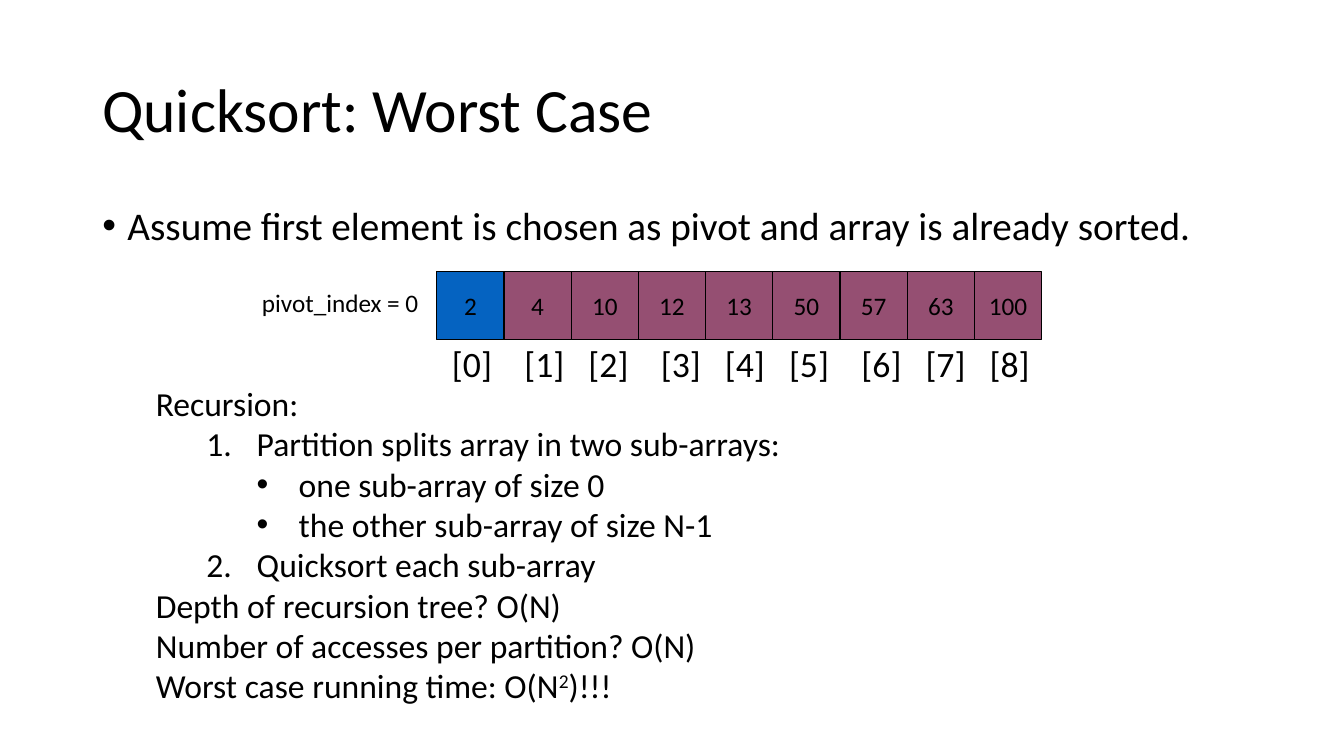
from itertools import accumulate

from lxml import etree
from pptx import Presentation
from pptx import util as u
from pptx.dml.color import RGBColor
from pptx.enum import shapes, text
from pptx.oxml.ns import qn

PX = 9525  # EMU in one px, 96 px to the inch
THEME = {
    "font": "Calibri",
    "ink": RGBColor.from_string("000000"),
    "pivot": RGBColor.from_string("0563C1"),
    "cell": RGBColor.from_string("954F72"),
    "title": 44, "body": 28, "index": 25.5, "steps": 24, "small": 18,
}


def fill_text(sp, lines, size, anchor=text.MSO_ANCHOR.TOP, wrap=True):
    """Put lines into a shape in the theme's font and ink."""
    tf = sp.text_frame
    tf.text = "\n".join(lines)
    tf.word_wrap = wrap
    tf.vertical_anchor = anchor
    for p in tf.paragraphs:
        for r in p.runs:
            r.font.name = THEME["font"]
            r.font.size = u.Pt(THEME[size])
            r.font.color.rgb = THEME["ink"]
    return tf


def indent(p, left, hang, bullet=None, **attrs):
    """Set a hanging indent in px and an optional bullet element."""
    pPr = p._p.get_or_add_pPr()
    pPr.set("marL", str(left * PX))
    pPr.set("indent", str(-hang * PX))
    if bullet == "buChar":
        etree.SubElement(pPr, qn("a:buFont"), typeface="Arial")
    if bullet:
        etree.SubElement(pPr, qn("a:" + bullet), **attrs)


prs = Presentation()
prs.slide_width, prs.slide_height = 1280 * PX, 720 * PX
s = prs.slides.add_slide(prs.slide_layouts[6])

# Title
sp = s.shapes.add_textbox(88 * PX, 38 * PX, 1104 * PX, 139 * PX)
tf = fill_text(sp, ["Quicksort: Worst Case"], "title", text.MSO_ANCHOR.MIDDLE)
tf.paragraphs[0].line_spacing = 0.9

# Assumption
sp = s.shapes.add_textbox(88 * PX, 192 * PX, 1104 * PX, 56 * PX)
tf = fill_text(sp, ["Assume first element is chosen as pivot and array is already sorted."], "body")
indent(tf.paragraphs[0], 24, 24, "buChar", char="•")
tf.paragraphs[0].line_spacing = 0.9

# Array cells, the first one being the pivot
CELL, ARRAY_LEFT, ARRAY_TOP = 64, 416, 259
values = [2, 4, 10, 12, 13, 50, 57, 63, 100]
for i, value in enumerate(values):
    sp = s.shapes.add_shape(shapes.MSO_SHAPE.RECTANGLE, (ARRAY_LEFT + i * CELL) * PX,
                            ARRAY_TOP * PX, CELL * PX, CELL * PX)
    sp.shadow.inherit = False
    sp.fill.solid()
    sp.fill.fore_color.rgb = THEME["pivot" if i == 0 else "cell"]
    sp.line.color.rgb = THEME["ink"]
    sp.line.width = u.Pt(0.75)
    tf = fill_text(sp, [str(value)], "small", text.MSO_ANCHOR.MIDDLE, wrap=False)
    tf.paragraphs[0].alignment = text.PP_ALIGN.CENTER

# Pivot label
sp = s.shapes.add_textbox(240 * PX, 269 * PX, 172 * PX, 38 * PX)
fill_text(sp, ["pivot_index = 0"], "small", wrap=False)

# Recursion steps: text, level
steps = [
    ("Recursion:", 1),
    ("Partition splits array in two sub-arrays:", 2),
    ("one sub-array of size 0", 3),
    ("the other sub-array of size N-1", 3),
    ("Quicksort each sub-array", 2),
    ("Depth of recursion tree? O(N)", 1),
    ("Number of accesses per partition? O(N)", 1),
    ("Worst case running time: O(N", 1),
]
sp = s.shapes.add_textbox(91 * PX, 360 * PX, 949 * PX, 317 * PX)
tf = fill_text(sp, [line for line, level in steps], "steps")
for p, (line, level) in zip(tf.paragraphs, steps):
    p.level = level
    if level == 1:
        indent(p, 104, 56)
    elif level == 2:
        indent(p, 144, 48, "buAutoNum", type="arabicPeriod")
    else:
        indent(p, 184, 40, "buChar", char="•")

# Squared N in the last line
for part, baseline in [("2", 30000), (")!!!", 0)]:
    r = tf.paragraphs[-1].add_run()
    r.text = part
    r.font.name = THEME["font"]
    r.font.size = u.Pt(THEME["steps"])
    r.font.color.rgb = THEME["ink"]
    r._r.get_or_add_rPr().set("baseline", str(baseline))

# Index labels on tab stops
gaps = [69, 61, 69, 61, 61, 69, 61, 61]
sp = s.shapes.add_textbox(421 * PX, 321 * PX, 600 * PX, 51 * PX)
tf = fill_text(sp, ["\t".join(f"[{i}]" for i in range(len(values)))], "index")
tabs = etree.SubElement(tf.paragraphs[0]._p.get_or_add_pPr(), qn("a:tabLst"))
for stop in accumulate(gaps):
    etree.SubElement(tabs, qn("a:tab"), pos=str(stop * PX), algn="l")

prs.save("out.pptx")
